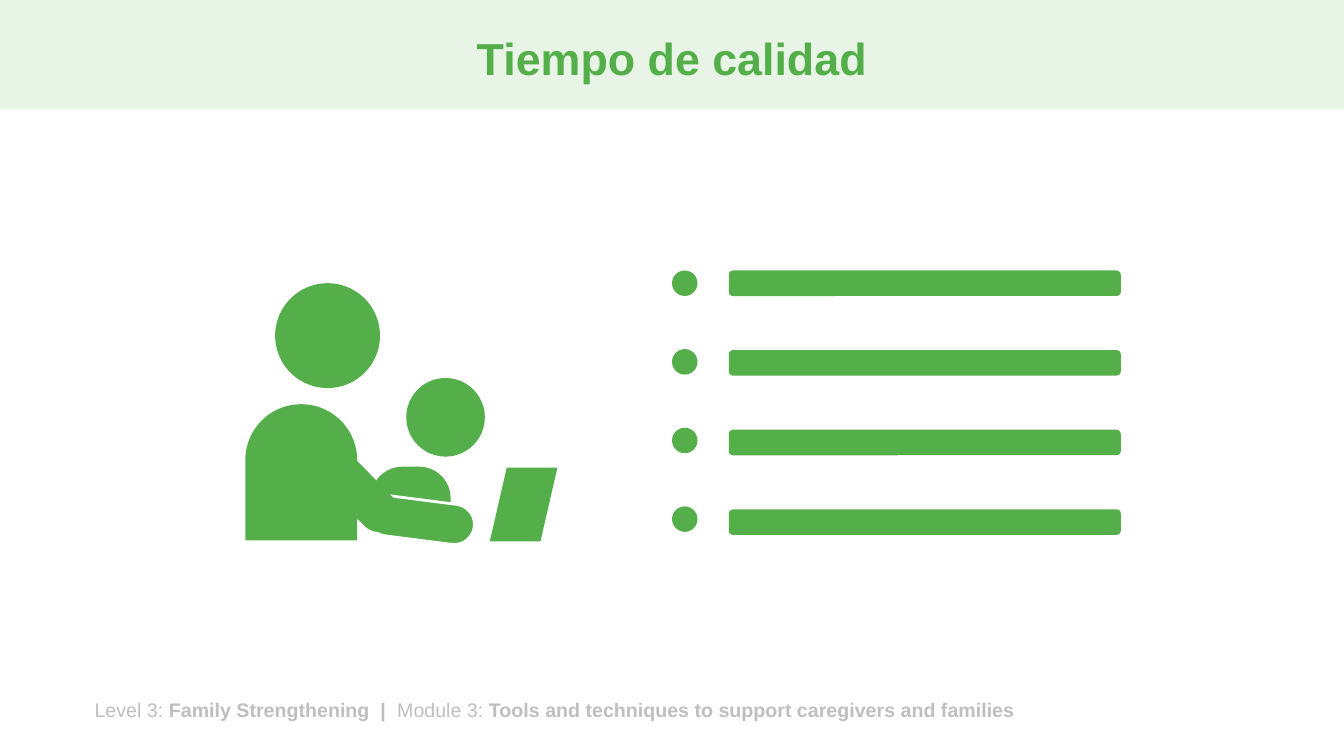
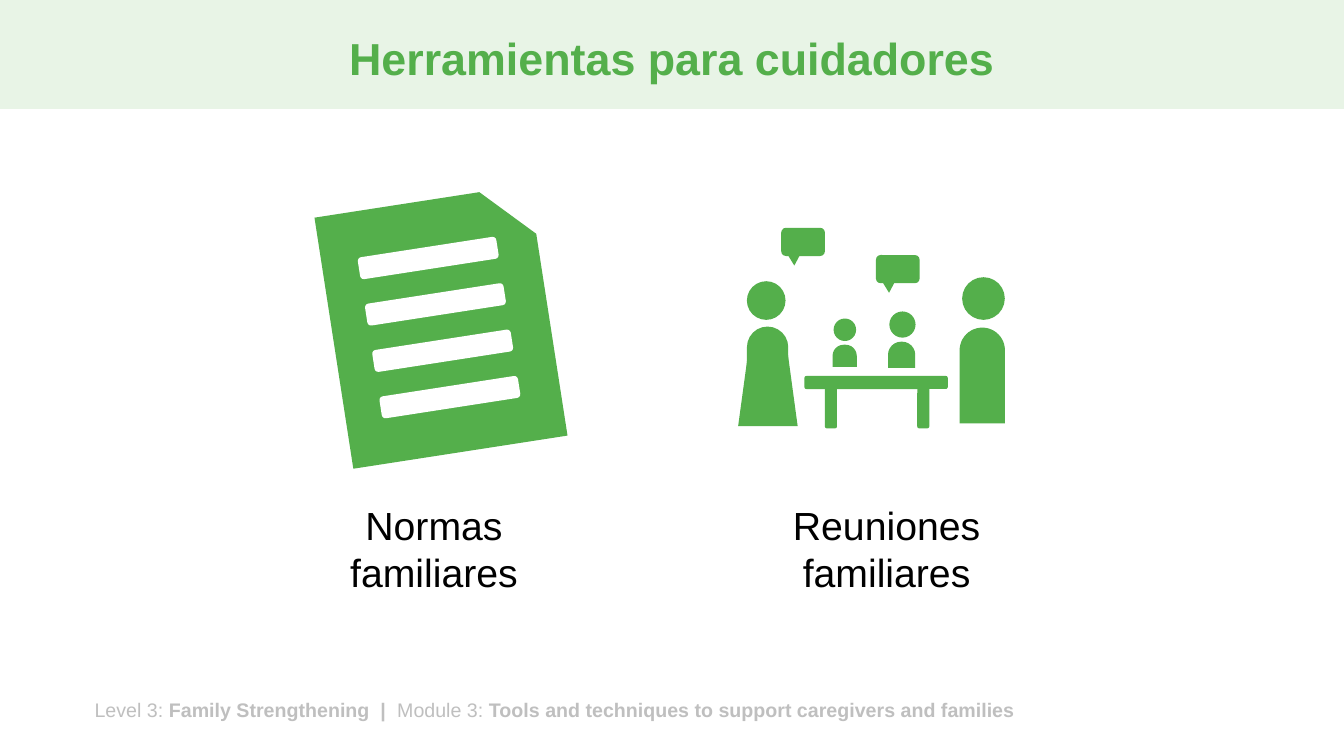
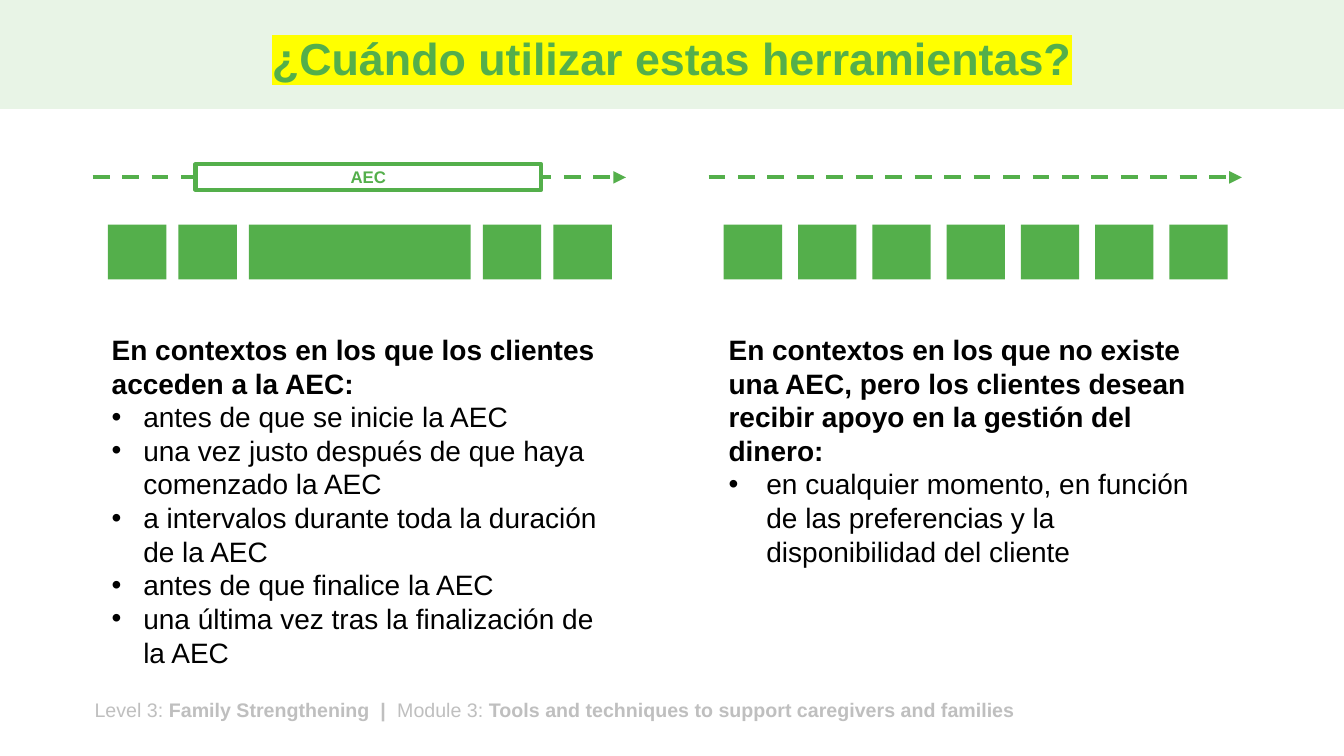
from dataclasses import dataclass

from lxml.etree import SubElement
from pptx import Presentation
from pptx.dml.color import RGBColor
from pptx.enum.dml import MSO_LINE
from pptx.enum.shapes import MSO_CONNECTOR, MSO_SHAPE
from pptx.enum.text import MSO_ANCHOR, MSO_AUTO_SIZE, PP_ALIGN
from pptx.oxml.ns import qn
from pptx.util import Inches, Pt

COLORS = {
    "green": "54AF4B",
    "pale": "E8F4E6",
    "white": "FFFFFF",
    "black": "000000",
    "gray": "BFBFBF",
    "yellow": "FFFF00",
}
FONT = "Arial"
WIDTH, HEIGHT = Inches(13.333), Inches(7.5)
COLUMNS, ROWS = 80, 45
FOOTER = (
    ("Level 3: ", False),
    ("Family Strengthening  |  ", True),
    ("Module 3: ", False),
    ("Tools and techniques to support caregivers and families", True),
)


@dataclass(frozen=True)
class Area:
    column: float
    row: float
    columns: float
    rows: float


@dataclass(frozen=True)
class Figure:
    kind: MSO_SHAPE
    area: Area
    fill: str = "green"
    rotation: float = 0
    adjustments: tuple[float, ...] = ()
    outline: str | None = None
    outline_width: float = 0


@dataclass(frozen=True)
class Person:
    body: Area
    head_column: float
    head_row: float
    head_size: float


@dataclass(frozen=True)
class Context:
    area: Area
    heading: str
    points: tuple[str, ...]
    indent: float


@dataclass(frozen=True)
class Timeline:
    start: float
    first_block: float
    block_widths: tuple[float, ...]
    gap: float
    label: str | None = None


def across(columns: float) -> int:
    return round(WIDTH * columns / COLUMNS)


def down(rows: float) -> int:
    return round(HEIGHT * rows / ROWS)


def place(area: Area) -> tuple[int, int, int, int]:
    return across(area.column), down(area.row), across(area.columns), down(area.rows)


def color(name: str) -> RGBColor:
    return RGBColor.from_string(COLORS[name])


def draw(page, figure: Figure):
    shape = page.shapes.add_shape(figure.kind, *place(figure.area))
    shape.shadow.inherit = False
    shape.rotation = figure.rotation
    for index, value in enumerate(figure.adjustments):
        shape.adjustments[index] = value
    shape.fill.solid()
    shape.fill.fore_color.rgb = color(figure.fill)
    if figure.outline:
        shape.line.color.rgb = color(figure.outline)
        shape.line.width = Pt(figure.outline_width)
    else:
        shape.line.fill.background()
    return shape


def write(para, text: str, *, size: float, ink: str = "black", bold: bool = False,
          align: PP_ALIGN = PP_ALIGN.LEFT, highlight: str | None = None,
          indent: float = 0) -> None:
    para.alignment = align
    span = para.add_run()
    span.text = text
    span.font.name = FONT
    span.font.size = Pt(size)
    span.font.bold = bold
    span.font.color.rgb = color(ink)
    if highlight:
        mark = span.font.fill._xPr.find(qn("a:solidFill"))
        marker = mark.makeelement(qn("a:highlight"), {})
        SubElement(marker, qn("a:srgbClr"), val=COLORS[highlight])
        mark.addnext(marker)
    if indent:
        properties = para._p.get_or_add_pPr()
        properties.set("marL", str(across(indent)))
        properties.set("indent", str(-across(indent)))
        bullet_color = SubElement(properties, qn("a:buClr"))
        SubElement(bullet_color, qn("a:srgbClr"), val=COLORS[ink])
        SubElement(properties, qn("a:buFont"), typeface=FONT)
        SubElement(properties, qn("a:buChar"), char="•")


def add_box(page, area: Area, grow: bool = True):
    box = page.shapes.add_textbox(*place(area))
    frame = box.text_frame
    frame.word_wrap = True
    frame.auto_size = MSO_AUTO_SIZE.SHAPE_TO_FIT_TEXT if grow else MSO_AUTO_SIZE.NONE
    return frame


def add_page(deck, title: str, highlight: str | None = None):
    page = deck.slides.add_slide(deck.slide_layouts[6])
    draw(page, Figure(MSO_SHAPE.RECTANGLE, Area(0, 0, COLUMNS, 6.48), "pale"))
    footer = add_box(page, Area(5.04, 41.22, 63.72, 2.04)).paragraphs[0]
    for text, bold in FOOTER:
        write(footer, text, size=14, ink="gray", bold=bold)
    heading = add_box(page, Area(5.5, 0.78, 69, 5.7), grow=False)
    heading.vertical_anchor = MSO_ANCHOR.MIDDLE
    para = heading.paragraphs[0]
    para.line_spacing = 0.9
    write(para, title, size=32, ink="green", bold=True, align=PP_ALIGN.CENTER,
          highlight=highlight)
    return page


def draw_person(page, person: Person) -> None:
    draw(page, Figure(MSO_SHAPE.ROUND_2_SAME_RECTANGLE, person.body, adjustments=(0.5, 0)))
    head = Area(person.head_column, person.head_row, person.head_size, person.head_size)
    draw(page, Figure(MSO_SHAPE.OVAL, head))


def add_quality_time(deck) -> None:
    page = add_page(deck, "Tiempo de calidad")
    child = Person(Area(22.08, 27.78, 4.74, 3.72), 24.18, 22.5, 4.68)
    adult = Person(Area(14.6, 24.06, 6.66, 8.1), 16.38, 16.86, 6.24)
    for person in (child, adult):
        draw_person(page, person)
    forearm = Figure(MSO_SHAPE.ROUNDED_RECTANGLE, Area(21.84, 29.76, 6.42, 2.4),
                     rotation=7.3, adjustments=(0.5,), outline="white", outline_width=2)
    upper_arm = Figure(MSO_SHAPE.ROUNDED_RECTANGLE, Area(17.94, 27.84, 6.42, 2.4),
                       rotation=45.5, adjustments=(0.5,))
    book = Figure(MSO_SHAPE.PARALLELOGRAM, Area(29.16, 27.84, 4.02, 4.38))
    for figure in (forearm, upper_arm, book):
        draw(page, figure)
    for index in range(4):
        bar = Area(43.38, 16.1 + 4.74 * index, 23.34, 1.52)
        dot = Area(40, 16.1 + 4.68 * index, 1.52, 1.52)
        draw(page, Figure(MSO_SHAPE.ROUNDED_RECTANGLE, bar))
        draw(page, Figure(MSO_SHAPE.OVAL, dot))


def draw_rules_sheet(page) -> None:
    tilt = -8.8
    draw(page, Figure(MSO_SHAPE.SNIP_1_RECTANGLE, Area(19.8, 11.88, 12.9, 15.12),
                      rotation=tilt, adjustments=(0.23,)))
    for index in range(4):
        line = Area(21.32 + 0.43 * index, 14.7 + 2.76 * index, 8.34, 1.32)
        draw(page, Figure(MSO_SHAPE.ROUNDED_RECTANGLE, line, "white", tilt))


def draw_meeting(page) -> None:
    family = (
        Person(Area(49.56, 20.52, 1.44, 1.32), 49.62, 18.96, 1.34),
        Person(Area(57.12, 19.5, 2.7, 5.7), 57.27, 16.5, 2.54),
        Person(Area(44.46, 19.44, 2.46, 3), 44.46, 16.74, 2.3),
        Person(Area(52.86, 20.34, 1.62, 1.56), 52.94, 18.54, 1.56),
    )
    for person in family:
        draw_person(page, person)
    draw(page, Figure(MSO_SHAPE.FLOWCHART_MANUAL_OPERATION,
                      Area(43.94, 20.16, 3.54, 5.2), rotation=180))
    table_top = Area(47.88, 22.38, 8.54, 0.78)
    legs = [Area(column, 22.74, 0.72, 2.76) for column in (49.1, 54.6)]
    for area in (table_top, *legs):
        draw(page, Figure(MSO_SHAPE.ROUNDED_RECTANGLE, area))
    for column, row in ((46.5, 13.56), (52.14, 15.18)):
        draw(page, Figure(MSO_SHAPE.ROUNDED_RECTANGULAR_CALLOUT,
                          Area(column, row, 2.6, 1.68), adjustments=(-0.2, 0.84, 0.17)))


def add_tools(deck) -> None:
    page = add_page(deck, "Herramientas para cuidadores")
    draw_rules_sheet(page)
    draw_meeting(page)
    captions = (
        ("Normas familiares", Area(19.8, 29.52, 12.06, 6.24)),
        ("Reuniones familiares", Area(44.64, 29.52, 16.26, 6.24)),
    )
    for text, area in captions:
        write(add_box(page, area).paragraphs[0], text, size=28, align=PP_ALIGN.CENTER)


def draw_timeline(page, timeline: Timeline) -> None:
    axis = 10.56
    arrow = page.shapes.add_connector(
        MSO_CONNECTOR.STRAIGHT, across(timeline.start), down(axis),
        across(timeline.start + 31.74), down(axis))
    arrow.line.color.rgb = color("green")
    arrow.line.width = Pt(3)
    arrow.line.dash_style = MSO_LINE.DASH
    SubElement(arrow.line._get_or_add_ln(), qn("a:tailEnd"), type="triangle")
    SubElement(arrow._element.spPr, qn("a:effectLst"))
    if timeline.label:
        period = draw(page, Figure(MSO_SHAPE.RECTANGLE, Area(11.64, 9.78, 20.58, 1.52),
                                   "white", outline="green", outline_width=3))
        period.text_frame.vertical_anchor = MSO_ANCHOR.MIDDLE
        write(period.text_frame.paragraphs[0], timeline.label, size=12, ink="green",
              bold=True, align=PP_ALIGN.CENTER)
    column = timeline.first_block
    for width in timeline.block_widths:
        draw(page, Figure(MSO_SHAPE.RECTANGLE, Area(column, 13.38, width, 3.26)))
        column += width + timeline.gap


def write_context(page, context: Context) -> None:
    frame = add_box(page, context.area)
    write(frame.paragraphs[0], context.heading, size=20, bold=True)
    for point in context.points:
        write(frame.add_paragraph(), point, size=20, indent=context.indent)


def add_timing(deck) -> None:
    page = add_page(deck, "¿Cuándo utilizar estas herramientas?", "yellow")
    block = 3.48
    timelines = (
        Timeline(5.52, 6.42, (block, block, 13.2, block, block), 0.72, "AEC"),
        Timeline(42.18, 43.08, (block,) * 7, 0.94),
    )
    for timeline in timelines:
        draw_timeline(page, timeline)
    contexts = (
        Context(
            Area(6.06, 19.5, 30.6, 20.82),
            "En contextos en los que los clientes acceden a la AEC:",
            (
                "antes de que se inicie la AEC",
                "una vez justo después de que haya comenzado la AEC",
                "a intervalos durante toda la duración de la AEC",
                "antes de que finalice la AEC",
                "una última vez tras la finalización de la AEC",
            ),
            1.88,
        ),
        Context(
            Area(42.78, 19.5, 30.6, 14.76),
            "En contextos en los que no existe una AEC, pero los clientes desean "
            "recibir apoyo en la gestión del dinero:",
            (
                "en cualquier momento, en función de las preferencias y la "
                "disponibilidad del cliente",
            ),
            2.25,
        ),
    )
    for context in contexts:
        write_context(page, context)


def main() -> None:
    deck = Presentation()
    deck.slide_width, deck.slide_height = WIDTH, HEIGHT
    add_quality_time(deck)
    add_tools(deck)
    add_timing(deck)
    deck.save("out.pptx")


if __name__ == "__main__":
    main()
